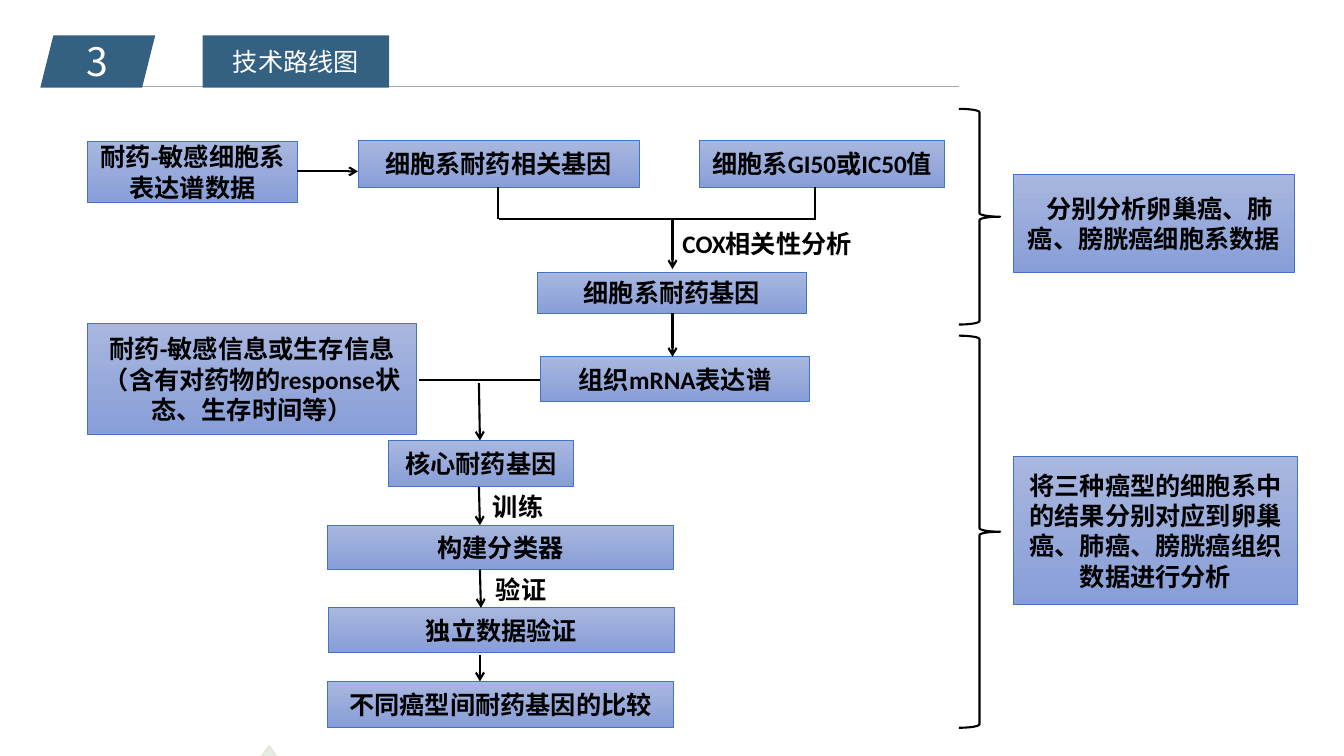
"""Build the technical roadmap slide."""
import pptx
import pptx.dml.color
import pptx.enum.dml
import pptx.enum.shapes
import pptx.enum.text
import pptx.oxml
import pptx.oxml.ns
import pptx.util

Inches = pptx.util.Inches
Pt = pptx.util.Pt
SHAPE = pptx.enum.shapes.MSO_SHAPE
ALIGN = pptx.enum.text.PP_ALIGN
ANCHOR = pptx.enum.text.MSO_ANCHOR
CJK = "Noto Sans CJK SC"
COLORS = {
    "navy": "346182", "white": "FFFFFF", "black": "000000", "rule": "A6A6A6",
    "top": "A8B7DF", "base": "889ED7", "edge": "4472C4",
    "leaf": "A2B894", "rim": "E0E6D3",
}


def rgb(name):
    return pptx.dml.color.RGBColor.from_string(COLORS[name])


def node(tag, attrs=""):
    space = pptx.oxml.ns.nsdecls("a")
    return pptx.oxml.parse_xml(f"<a:{tag} {space} {attrs}/>")


def write(shape, text, size=18, font="Calibri", color="black", bold=True,
          align=ALIGN.CENTER, anchor=ANCHOR.MIDDLE, indent=0):
    frame = shape.text_frame
    frame.word_wrap = True
    frame.auto_size = pptx.enum.text.MSO_AUTO_SIZE.NONE
    frame.vertical_anchor = anchor
    para = frame.paragraphs[0]
    para.alignment = align
    if indent:
        props = para._p.get_or_add_pPr()
        props.set("marL", "0")
        props.set("indent", str(Inches(indent)))
    run = para.add_run()
    run.text = text
    run.font.size = Pt(size)
    run.font.bold = bold
    run.font.color.rgb = rgb(color)
    run.font.name = font
    run._r.get_or_add_rPr().append(node("ea", f'typeface="{CJK}"'))


def place(shape, left, top, width, height):
    shape.left, shape.top = Inches(left), Inches(top)
    shape.width, shape.height = Inches(width), Inches(height)


def paint(shape, color):
    shape.fill.solid()
    shape.fill.fore_color.rgb = rgb(color)
    shape.line.fill.background()


def add(slide, kind, *area):
    shape = slide.shapes.add_shape(kind, *map(Inches, area))
    shape.shadow.inherit = False
    return shape


def box(slide, text, *area, indent=0):
    shape = add(slide, SHAPE.RECTANGLE, *area)
    shape.fill.gradient()
    shape.fill.gradient_angle = 270
    for stop, color in zip(shape.fill.gradient_stops, ("top", "base")):
        stop.color.rgb = rgb(color)
    shape.line.color.rgb = rgb("edge")
    shape.line.width = Pt(0.5)
    write(shape, text, indent=indent)


def label(slide, text, *area, **style):
    shape = slide.shapes.add_textbox(*map(Inches, area))
    write(shape, text, anchor=ANCHOR.TOP, **style)


def link(slide, *ends, arrow=False, color="black", width=1.5):
    line = slide.shapes.add_connector(
        pptx.enum.shapes.MSO_CONNECTOR.STRAIGHT, *map(Inches, ends))
    line.line.color.rgb = rgb(color)
    line.line.width = Pt(width)
    if arrow:
        line.line._get_or_add_ln().append(node("tailEnd", 'type="arrow"'))
    line._element.spPr.append(node("effectLst"))


def brace(slide, *area):
    shape = add(slide, SHAPE.RIGHT_BRACE, *area)
    shape.fill.background()
    shape.line.color.rgb = rgb("black")
    shape.line.width = Pt(1.5)


def leaf(slide):
    pen = slide.shapes.build_freeform(Inches(2.67), Inches(7.4), scale=1.0)
    pen.add_line_segments(
        [(Inches(2.78), Inches(7.55)), (Inches(2.56), Inches(7.55))], close=True)
    shape = pen.convert_to_shape()
    shape.shadow.inherit = False
    paint(shape, "leaf")
    tint = shape.fill._xPr.find(".//" + pptx.oxml.ns.qn("a:srgbClr"))
    tint.append(node("alpha", 'val="25000"'))
    shape.line.color.rgb = rgb("rim")
    shape.line.width = Pt(1)


def head(slide):
    link(slide, 0.87, 0.86, 9.51, 0.86, color="rule", width=0.5)
    paint(add(slide, SHAPE.PARALLELOGRAM, 0.4, 0.35, 1.14, 0.52), "navy")
    label(slide, "3", 0.41, 0.32, 1.12, 0.57,
          size=28, font=CJK, color="white", bold=False)
    title = slide.shapes.title
    place(title, 2.01, 0.35, 1.85, 0.52)
    paint(title, "navy")
    write(title, "技术路线图", color="white", bold=False)
    slide.shapes._spTree.append(title._element)


def main():
    deck = pptx.Presentation()
    deck.slide_width, deck.slide_height = Inches(13.33), Inches(7.5)
    slide = deck.slides.add_slide(deck.slide_layouts[5])
    leaf(slide)
    head(slide)

    for text, *area in (
        ("耐药-敏感细胞系表达谱数据", 0.87, 1.4, 2.08, 0.61),
        ("细胞系耐药相关基因", 3.55, 1.39, 2.79, 0.47),
        ("细胞系GI50或IC50值", 6.94, 1.39, 2.43, 0.47),
        ("细胞系耐药基因", 5.33, 2.7, 2.67, 0.41),
        ("耐药-敏感信息或生存信息（含有对药物的response状态、生存时间等）",
         0.87, 3.21, 3.26, 1.1),
        ("组织mRNA表达谱", 5.36, 3.54, 2.67, 0.44),
        ("核心耐药基因", 3.85, 4.37, 1.84, 0.46),
        ("构建分类器", 3.25, 5.21, 3.43, 0.44),
        ("独立数据验证", 3.26, 6.03, 3.43, 0.44),
        ("不同癌型间耐药基因的比较", 3.25, 6.76, 3.43, 0.46),
        ("将三种癌型的细胞系中的结果分别对应到卵巢癌、肺癌、膀胱癌组织数据进行分析",
         10.05, 4.53, 2.82, 1.47),
    ):
        box(slide, text, *area)
    box(slide, "分别分析卵巢癌、肺癌、膀胱癌细胞系数据",
        10.05, 1.73, 2.79, 0.97, indent=0.11)

    for ends in (
        (4.94, 1.86, 4.94, 2.17), (8.08, 1.86, 8.08, 2.17),
        (4.95, 2.17, 8.09, 2.17), (4.16, 3.77, 5.36, 3.77),
    ):
        link(slide, *ends)
    for ends in (
        (2.95, 1.7, 3.55, 1.7), (6.67, 2.17, 6.67, 2.67),
        (6.67, 3.11, 6.67, 3.54), (4.75, 3.8, 4.76, 4.37),
        (4.75, 4.83, 4.76, 5.21), (4.76, 5.65, 4.77, 6.03),
        (4.76, 6.5, 4.76, 6.76),
    ):
        link(slide, *ends, arrow=True)

    for text, *area in (
        ("COX相关性分析", 6.67, 2.22, 2.11, 0.4),
        ("训练", 4.79, 4.83, 1.54, 0.4),
        ("验证", 4.82, 5.65, 1.22, 0.4),
    ):
        label(slide, text, *area, align=ALIGN.LEFT)

    brace(slide, 9.51, 1.08, 0.41, 2.14)
    brace(slide, 9.51, 3.33, 0.41, 3.89)
    deck.save("out.pptx")


if __name__ == "__main__":
    main()
